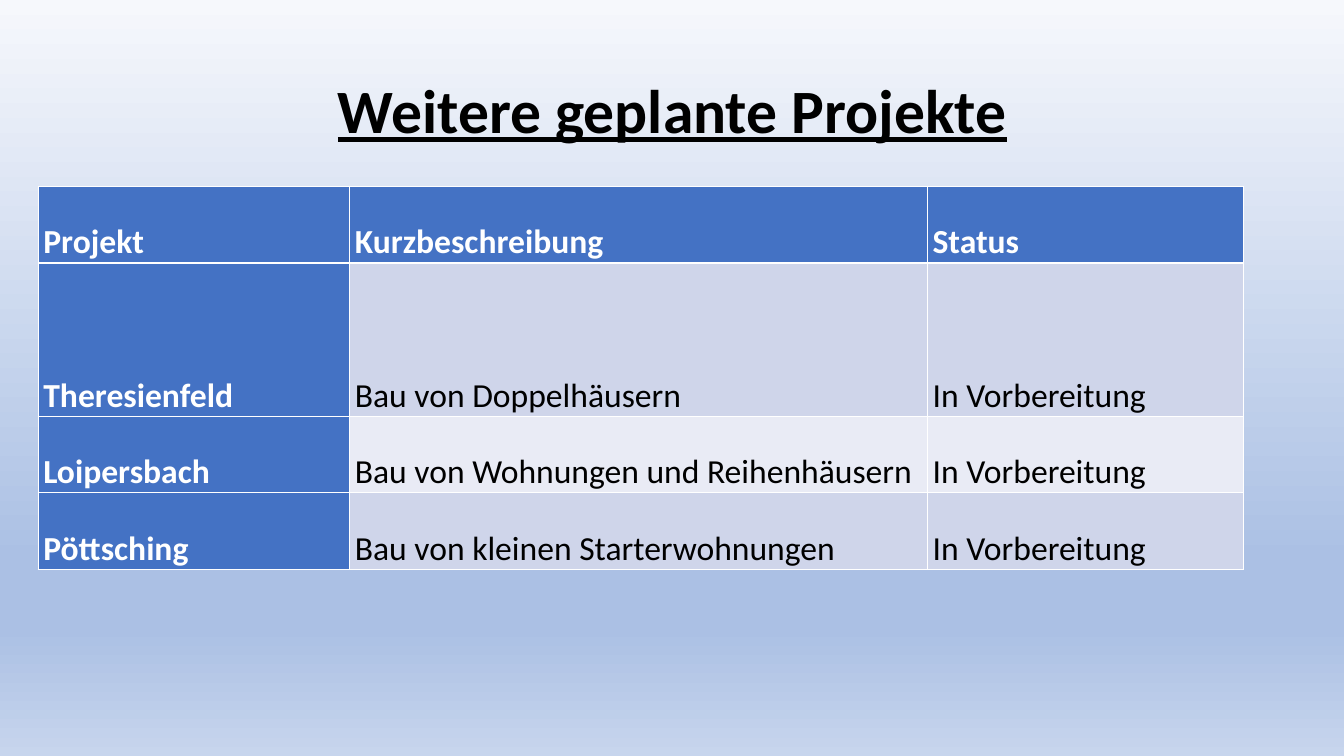
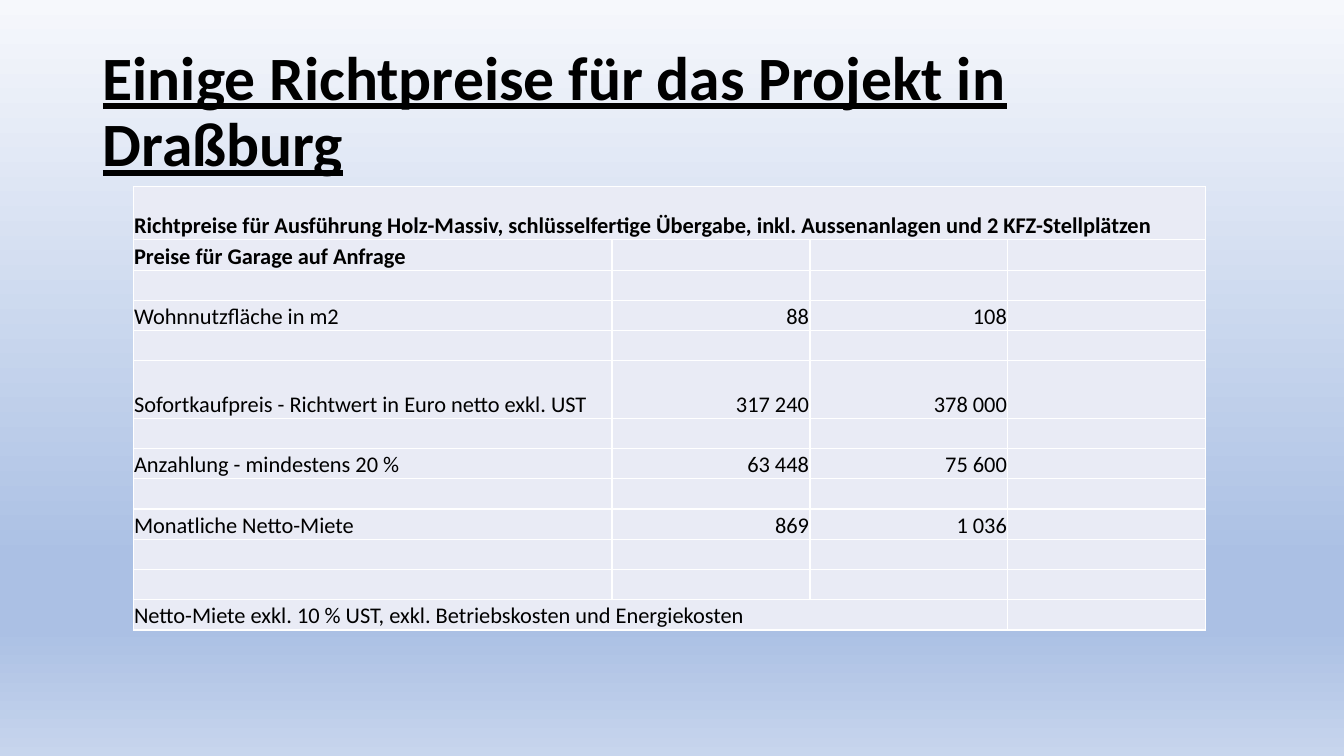
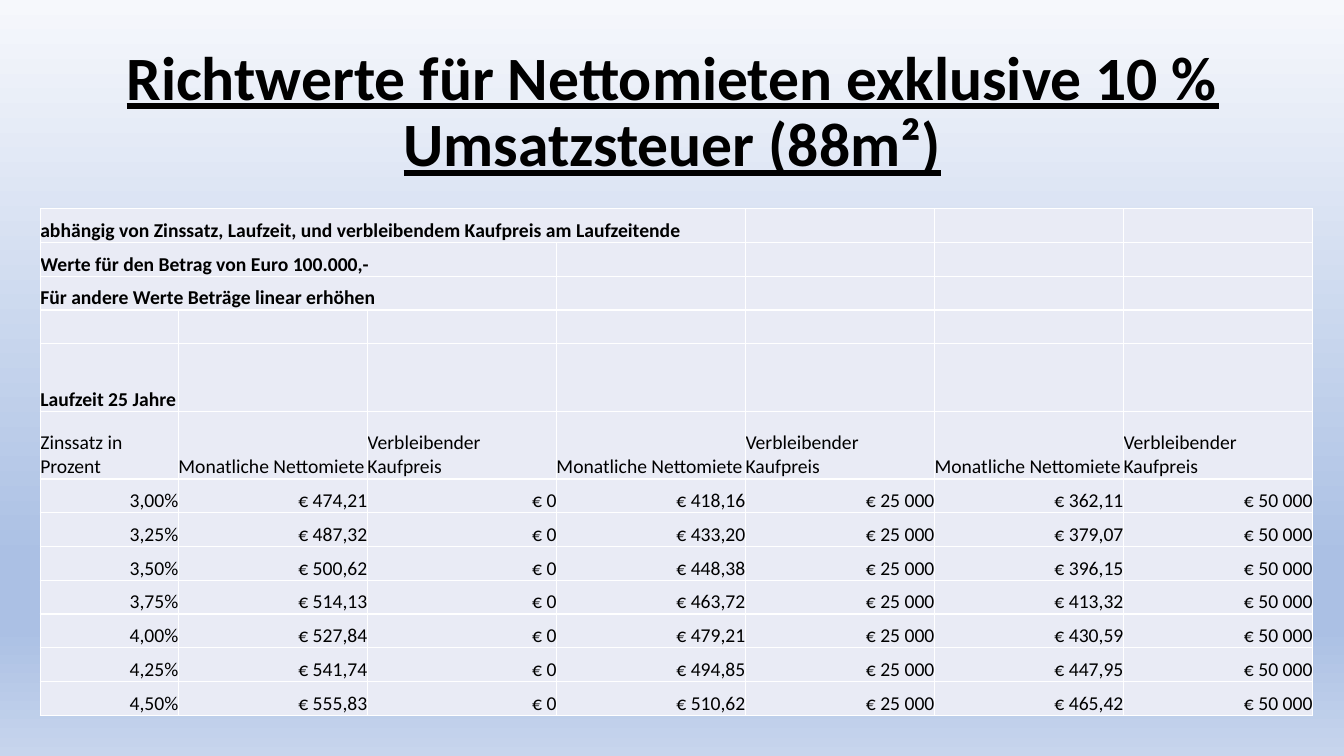
from dataclasses import dataclass

from lxml.etree import SubElement
from pptx import Presentation
from pptx.dml.color import RGBColor
from pptx.enum.text import MSO_ANCHOR, MSO_AUTO_SIZE, PP_ALIGN
from pptx.oxml.ns import qn
from pptx.util import Inches, Pt


@dataclass(frozen=True)
class Theme:
    font: str = "Calibri"
    black: str = "000000"
    white: str = "FFFFFF"
    accent: str = "4472C4"
    band_dark: str = "CFD5EA"
    band_light: str = "E9EBF5"
    background: tuple = ((0, "F6F8FC"), (74, "ABC0E4"), (83, "ABC0E4"), (100, "C7D5ED"))
    title_size: int = 44
    project_size: int = 24
    price_size: int = 16
    rent_size: int = 14


theme = Theme()

presentation = Presentation()
presentation.slide_width = Inches(13.33)
presentation.slide_height = Inches(7.5)
title_layout = presentation.slide_layouts[5]

# Shared background: vertical gradient on the master
background_fill = presentation.slide_master.background.fill
background_fill.gradient()
background_fill.gradient_angle = 270
stop_list = next(presentation.slide_master.element.iter(qn("a:gsLst")))
for stop in list(stop_list):
    stop_list.remove(stop)
for position, color in theme.background:
    stop = SubElement(stop_list, qn("a:gs"), pos=str(position * 1000))
    SubElement(stop, qn("a:srgbClr"), val=color)


def write_text(text_frame, text, *, size, color=theme.black, bold=False, underline=False,
               align=PP_ALIGN.LEFT, line_spacing=1.0, space_after=0):
    paragraph = text_frame.paragraphs[0]
    paragraph.alignment = align
    paragraph.line_spacing = line_spacing
    paragraph.space_after = Pt(space_after)
    run = paragraph.add_run()
    run.text = text
    run.font.name = theme.font
    run.font.size = Pt(size)
    run.font.bold = bold
    run.font.underline = underline
    run.font.color.rgb = RGBColor.from_string(color)


def add_table_slide(title, left, top, widths, heights, *, size, side_margin=0, top_margin=0,
                    title_align=PP_ALIGN.CENTER, header=False):
    """Add a titled slide and return its table, with light cells ready for text."""
    slide = presentation.slides.add_slide(title_layout)
    title_shape = slide.shapes.title
    title_shape.left, title_shape.top = Inches(0.92), Inches(0.4)
    title_shape.width, title_shape.height = Inches(11.5), Inches(1.45)
    title_frame = title_shape.text_frame
    title_frame.word_wrap = True
    title_frame.auto_size = MSO_AUTO_SIZE.NONE
    title_frame.vertical_anchor = MSO_ANCHOR.MIDDLE
    write_text(title_frame, title, size=theme.title_size, bold=True, underline=True,
               align=title_align, line_spacing=0.9)

    table = slide.shapes.add_table(len(heights), len(widths), Inches(left), Inches(top),
                                   Inches(sum(widths)), Inches(sum(heights))).table
    table.first_row = header
    table.horz_banding = False
    for column, width in zip(table.columns, widths):
        column.width = Inches(width)
    for row, height in zip(table.rows, heights):
        row.height = Inches(height)
    for cell in table.iter_cells():
        cell.fill.solid()
        cell.fill.fore_color.rgb = RGBColor.from_string(theme.band_light)
        cell.vertical_anchor = MSO_ANCHOR.BOTTOM
        cell.margin_left = cell.margin_right = Inches(side_margin)
        cell.margin_top, cell.margin_bottom = Inches(top_margin), 0
        # Keeps empty cells from stretching their row
        end_format = cell.text_frame.paragraphs[0]._p.get_or_add_endParaRPr()
        end_format.set("sz", str(size * 100))
    return table


# Slide 1: planned projects
projects = [
    ("Projekt", "Kurzbeschreibung", "Status"),
    ("Theresienfeld", "Bau von Doppelhäusern", "In Vorbereitung"),
    ("Loipersbach", "Bau von Wohnungen und Reihenhäusern", "In Vorbereitung"),
    ("Pöttsching", "Bau von kleinen Starterwohnungen", "In Vorbereitung"),
]
project_table = add_table_slide(
    "Weitere geplante Projekte", 0.38, 1.85, [3.09, 5.73, 3.13], [0.76, 1.52, 0.76, 0.76],
    size=theme.project_size, side_margin=0.05, header=True)
for row_index, project in enumerate(projects):
    for column_index, text in enumerate(project):
        cell = project_table.cell(row_index, column_index)
        is_heading = row_index == 0 or column_index == 0
        band = theme.band_dark if row_index % 2 else theme.band_light
        cell.fill.fore_color.rgb = RGBColor.from_string(theme.accent if is_heading else band)
        write_text(cell.text_frame, text, size=theme.project_size, bold=is_heading,
                   color=theme.white if is_heading else theme.black,
                   line_spacing=1.07, space_after=8)

# Slide 2: guide prices
prices = {
    0: ("Richtpreise für Ausführung Holz-Massiv, schlüsselfertige Übergabe, "
        "inkl. Aussenanlagen und 2 KFZ-Stellplätzen",),
    1: ("Preise für Garage auf Anfrage",),
    3: ("Wohnnutzfläche in m2", "88", "108"),
    5: ("Sofortkaufpreis - Richtwert in Euro netto exkl. UST", "317 240", "378 000"),
    7: ("Anzahlung - mindestens 20 %", "63 448", "75 600"),
    9: ("Monatliche Netto-Miete", "869", "1 036"),
    12: ("Netto-Miete exkl. 10 % UST, exkl. Betriebskosten und Energiekosten",),
}
price_table = add_table_slide(
    "Einige Richtpreise für das Projekt in Draßburg", 1.32, 1.85,
    [4.75] + [5.89 / 3] * 3, [0.53] + [0.3] * 4 + [0.57] + [0.3] * 7,
    size=theme.price_size, side_margin=0.01, top_margin=0.01, title_align=PP_ALIGN.LEFT)
price_table.cell(0, 0).merge(price_table.cell(0, 3))
price_table.cell(12, 0).merge(price_table.cell(12, 2))
for row_index, values in prices.items():
    for column_index, text in enumerate(values):
        write_text(price_table.cell(row_index, column_index).text_frame, text,
                   size=theme.price_size, bold=row_index < 2,
                   align=PP_ALIGN.RIGHT if column_index else PP_ALIGN.LEFT)

# Slide 3: net rents by interest rate and remaining price
net_rents = [
    ("3,00%", "474,21", "418,16", "362,11"),
    ("3,25%", "487,32", "433,20", "379,07"),
    ("3,50%", "500,62", "448,38", "396,15"),
    ("3,75%", "514,13", "463,72", "413,32"),
    ("4,00%", "527,84", "479,21", "430,59"),
    ("4,25%", "541,74", "494,85", "447,95"),
    ("4,50%", "555,83", "510,62", "465,42"),
]
remaining_prices = ("0", "25 000", "50 000")
rent_rows = [
    ["abhängig von Zinssatz, Laufzeit, und verbleibendem Kaufpreis am Laufzeitende"],
    ["Werte für den Betrag von Euro 100.000,-"],
    ["Für andere Werte Beträge linear erhöhen"],
    [],
    ["Laufzeit 25 Jahre"],
    ["Zinssatz in Prozent"] + ["Monatliche Nettomiete", "Verbleibender Kaufpreis"] * 3,
]
heading_row = len(rent_rows) - 1
for rate, *rents in net_rents:
    amounts = [f"€ {amount}" for pair in zip(rents, remaining_prices) for amount in pair]
    rent_rows.append([rate] + amounts)

row_height = 5.03 / 15
rent_table = add_table_slide(
    "Richtwerte für Nettomieten exklusive 10 % Umsatzsteuer (88m²)", 0.4, 2.07,
    [1.37] + [11.25 / 6] * 6,
    [row_height] * 4 + [2 * row_height] * 2 + [row_height] * len(net_rents),
    size=theme.rent_size)
for row_index, last_column in enumerate((3, 2, 2)):
    rent_table.cell(row_index, 0).merge(rent_table.cell(row_index, last_column))
for row_index, values in enumerate(rent_rows):
    for column_index, text in enumerate(values):
        write_text(rent_table.cell(row_index, column_index).text_frame, text,
                   size=theme.rent_size, bold=row_index < heading_row,
                   align=PP_ALIGN.RIGHT if row_index > heading_row else PP_ALIGN.LEFT)

presentation.save("out.pptx")
